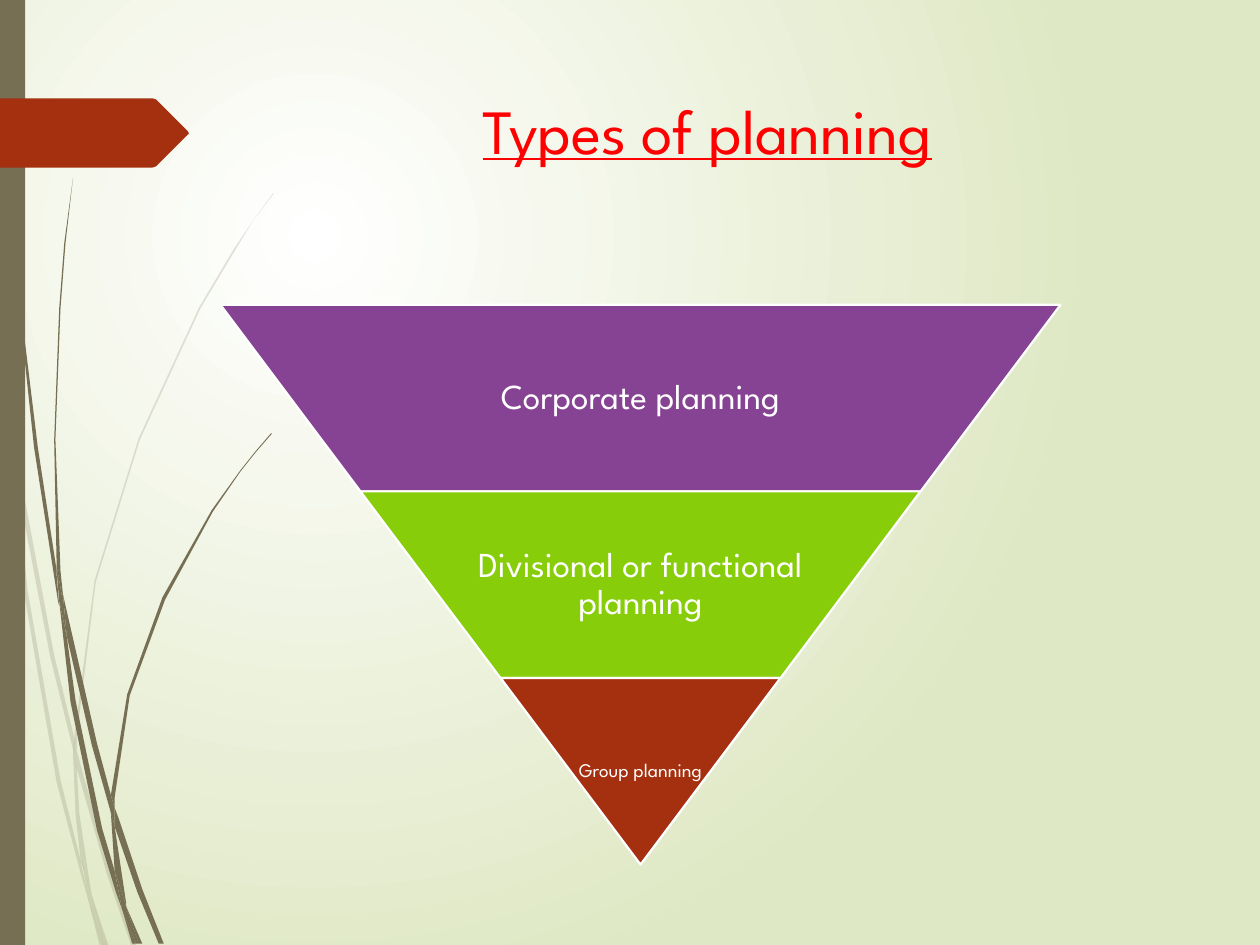
from pptx import Presentation
from pptx.dml.color import RGBColor
from pptx.enum import shapes, text
from pptx.oxml import parse_xml
from pptx.oxml.ns import nsdecls, qn
from pptx.util import Pt

FONT = "League Spartan"
COLORS = {
    "white": "FFFFFF", "sage": "DFE8C4", "olive": "766F54", "rust": "A53010",
    "purple": "864393", "green": "87CD09", "red": "FF0000",
}
UNIT = Pt(0.72)  # outline coordinates are in steps of 0.72 pt

PALE_GRASS = [
    [(40, 522), (59, 599), (59, 586), (43, 520), (10, 345), (12, 376)],
    [(64, 607), (61, 596), (61, 610), (85, 694), (104, 750), (108, 750), (88, 692)],
    [(83, 750), (86, 750), (73, 711)],
    [(64, 683), (48, 619), (22, 469), (12, 376), (8, 350), (19, 470), (45, 621),
     (64, 693), (70, 714), (69, 707)],
    [(58, 599), (60, 646), (64, 683), (67, 692), (73, 711), (72, 706), (63, 646),
     (61, 610), (61, 608)],
    [(61, 584), (76, 462), (111, 349), (159, 245), (187, 198), (201, 175), (217, 154),
     (217, 153), (201, 175), (186, 197), (158, 244), (110, 348), (75, 461), (59, 584),
     (59, 586), (61, 596)],
    [(70, 714), (79, 750), (82, 750)],
    [(61, 608), (61, 610), (61, 596), (59, 586), (58, 599)],
    [(67, 692), (65, 683), (69, 707), (70, 714), (82, 750), (83, 750), (73, 711)],
]
DARK_GRASS = [
    [(5, 110), (14, 233), (27, 355), (46, 477), (47, 481), (45, 457), (45, 453),
     (30, 355), (15, 232), (6, 109), (4, 48), (3, 0), (2, 0), (3, 48)],
    [(73, 592), (88, 645), (88, 633), (88, 631), (77, 590), (50, 472), (53, 505)],
    [(94, 649), (91, 641), (91, 656), (109, 708), (126, 749), (130, 749), (113, 706)],
    [(91, 691), (81, 657), (60, 556), (53, 505), (47, 477), (56, 557), (77, 659),
     (92, 708), (97, 722), (96, 717)],
    [(50, 472), (48, 453), (44, 349), (48, 245), (52, 193), (58, 141), (51, 193),
     (47, 245), (43, 349), (45, 449), (49, 472)],
    [(110, 749), (113, 749), (100, 719)],
    [(47, 477), (53, 505), (50, 472), (49, 472), (45, 449), (45, 453)],
    [(91, 633), (103, 552), (131, 476), (169, 406), (191, 374), (203, 359), (216, 344),
     (215, 344), (203, 358), (191, 373), (168, 405), (129, 474), (101, 551), (88, 631),
     (91, 641)],
    [(97, 722), (105, 749), (108, 749)],
    [(88, 645), (91, 691), (96, 706), (100, 719), (100, 716), (91, 656), (90, 651)],
    [(88, 645), (90, 651), (91, 656), (91, 641), (88, 631), (88, 633)],
    [(96, 706), (91, 691), (96, 717), (97, 722), (108, 749), (110, 749), (100, 719)],
]
ARROW_TAB = [(0, 78), (121, 78), (124, 79), (149, 104), (149.5, 105.5), (149, 107),
             (124, 132), (121, 133), (0, 133)]

TITLE = "Types of planning"
# label, fill, font size, label width as a share of the tier, inset
TIERS = [
    ("Corporate planning", "purple", 20, 0.65, 2),
    ("Divisional or functional planning", "green", 20, 0.65, 2),
    ("Group planning", "rust", 11, 1, 1.4),
]
PYRAMID_CENTER, PYRAMID_TOP, PYRAMID_WIDTH, TIER_HEIGHT = 366, 174.2, 480, 106.6


def rgb(name):
    return RGBColor.from_string(COLORS[name])


def paint(shape, color, opacity=100):
    shape.shadow.inherit = False
    shape.fill.solid()
    shape.fill.fore_color.rgb = rgb(color)
    shape.line.fill.background()
    if opacity < 100:
        node = shape.fill._xPr.find(".//" + qn("a:srgbClr"))
        node.append(parse_xml(f'<a:alpha {nsdecls("a")} val="{opacity * 1000}"/>'))


def add_outline(slide, points, color, opacity=100):
    builder = slide.shapes.build_freeform(*points[0], scale=UNIT)
    builder.add_line_segments(points[1:], close=True)
    paint(builder.convert_to_shape(), color, opacity)


def add_label(slide, words, box, size, color, insets):
    """Add a text box; insets are left, top, right, bottom."""
    frame = slide.shapes.add_textbox(*map(Pt, box)).text_frame
    frame.word_wrap = True
    (frame.margin_left, frame.margin_top,
     frame.margin_right, frame.margin_bottom) = map(Pt, insets)
    paragraph = frame.paragraphs[0]
    paragraph.text = words
    paragraph.font.name = FONT
    paragraph.font.size = Pt(size)
    paragraph.font.color.rgb = rgb(color)
    return frame, paragraph


def set_background(slide):
    fill = slide.background.fill
    fill.gradient()
    for stop, position, color in zip(fill.gradient_stops, (0, 1), ("white", "sage")):
        stop.position = position
        stop.color.rgb = rgb(color)
    gradient = slide.element.find(".//" + qn("a:gradFill"))
    gradient.replace(gradient.find(qn("a:lin")), parse_xml(
        f'<a:path {nsdecls("a")} path="circle">'
        '<a:fillToRect l="50000" t="50000" r="100000" b="100000"/></a:path>'))


def add_tier(slide, index, label, color, size, share, inset):
    width = PYRAMID_WIDTH * (len(TIERS) - index) / len(TIERS)
    top = PYRAMID_TOP + index * TIER_HEIGHT
    tier = slide.shapes.add_shape(
        shapes.MSO_SHAPE.TRAPEZOID, Pt(PYRAMID_CENTER - width / 2), Pt(top),
        Pt(width), Pt(TIER_HEIGHT))
    tier.rotation = 180
    tier.adjustments[0] = 0.75
    paint(tier, color)
    tier.line.color.rgb = rgb("white")
    tier.line.width = Pt(1.25)

    box = (PYRAMID_CENTER - width * share / 2, top, width * share, TIER_HEIGHT)
    frame, paragraph = add_label(slide, label, box, size, "white", [inset] * 4)
    frame.vertical_anchor = text.MSO_ANCHOR.MIDDLE
    paragraph.alignment = text.PP_ALIGN.CENTER
    paragraph.line_spacing = 0.9


def main():
    presentation = Presentation()
    presentation.slide_width, presentation.slide_height = Pt(720), Pt(540)
    slide = presentation.slides.add_slide(presentation.slide_layouts[6])
    set_background(slide)

    for points in PALE_GRASS:
        add_outline(slide, points, "olive", 20)
    for points in DARK_GRASS:
        add_outline(slide, points, "olive")
    side_bar = slide.shapes.add_shape(
        shapes.MSO_SHAPE.RECTANGLE, 0, 0, Pt(14.4), presentation.slide_height)
    paint(side_bar, "olive")
    add_outline(slide, ARROW_TAB, "rust")

    _, heading = add_label(slide, TITLE, (153.4, 49, 519, 100.8), 36, "red",
                           (122.5, 3.6, 7.2, 3.6))
    heading.font.underline = True
    for index, tier in enumerate(TIERS):
        add_tier(slide, index, *tier)

    presentation.save("out.pptx")


if __name__ == "__main__":
    main()
